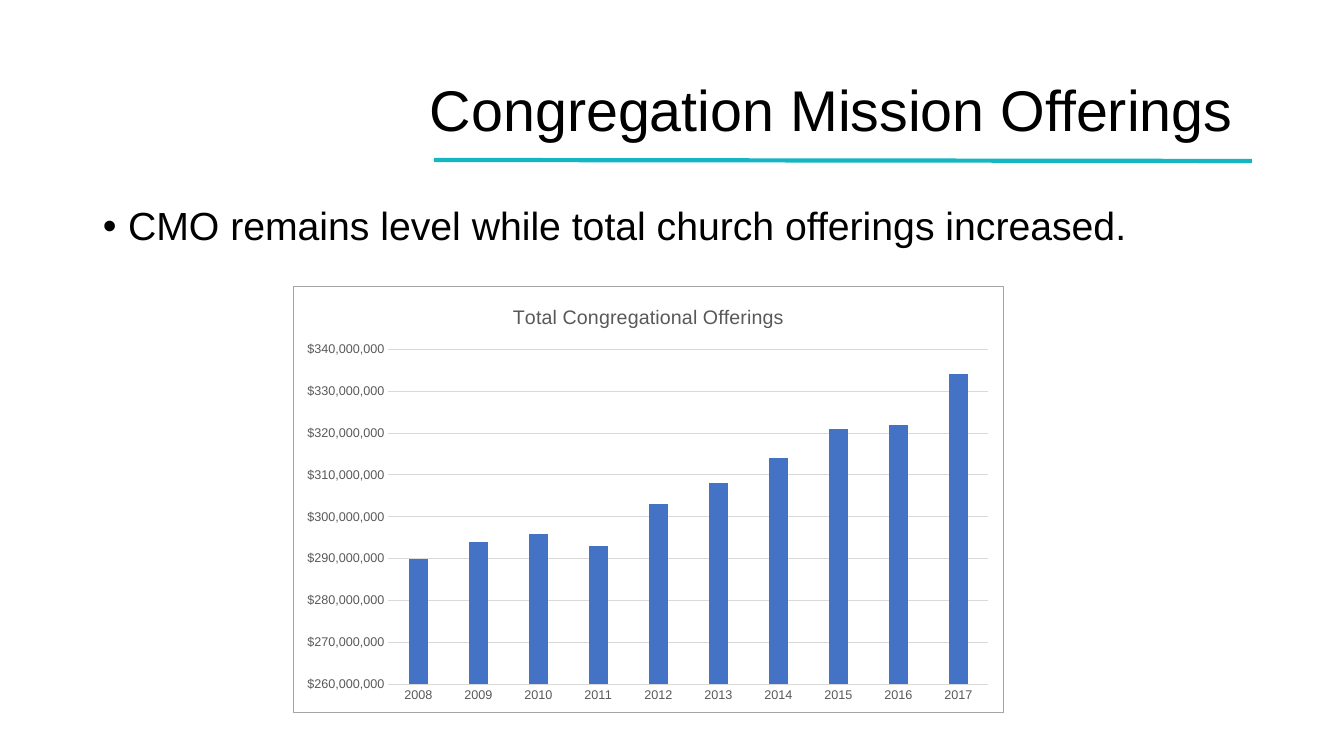
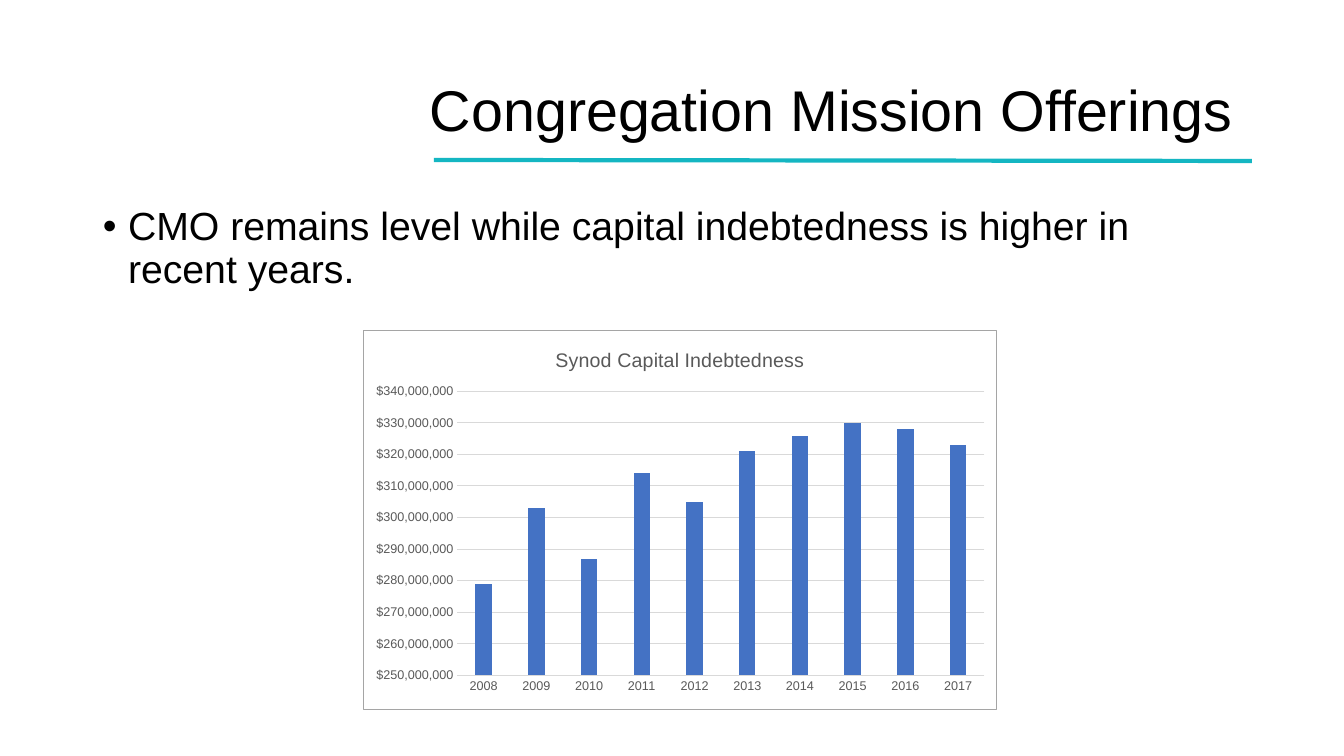
from lxml import etree
from pptx import Presentation
from pptx.chart.data import CategoryChartData
from pptx.dml.color import RGBColor
from pptx.enum.chart import XL_CHART_TYPE, XL_TICK_MARK
from pptx.enum.shapes import MSO_CONNECTOR
from pptx.enum.text import MSO_ANCHOR
from pptx.oxml import parse_xml
from pptx.oxml.ns import nsdecls, qn
from pptx.util import Pt

COLUMN = XL_CHART_TYPE.COLUMN_CLUSTERED
NO_TICK = XL_TICK_MARK.NONE
STRAIGHT = MSO_CONNECTOR.STRAIGHT
TOP, MIDDLE = MSO_ANCHOR.TOP, MSO_ANCHOR.MIDDLE

BLACK = RGBColor(0x00, 0x00, 0x00)
WHITE = RGBColor(0xFF, 0xFF, 0xFF)
TEAL = RGBColor(0x14, 0xB6, 0xC2)
BLUE = RGBColor(0x44, 0x72, 0xC4)
GREY_TEXT = RGBColor(0x59, 0x59, 0x59)
GREY_GRID = RGBColor(0xD9, 0xD9, 0xD9)
GREY_BORDER = RGBColor(0xA5, 0xA5, 0xA5)

FONT = "Arial"
SCALE = 914400 / 100.8
MILLION = 1_000_000
YEARS = [str(year) for year in range(2008, 2018)]
TITLE = "Congregation Mission Offerings"

SLIDES = [
    dict(bullet="CMO remains level while total church offerings increased.",
         title="Total Congregational Offerings",
         frame=(293, 286, 711, 427), plot=(388, 349, 601, 336), low=260,
         values=[290, 294, 296, 293, 303, 308, 314, 321, 322, 334]),
    dict(bullet="CMO remains level while capital indebtedness is higher in recent years.",
         title="Synod Capital Indebtedness",
         frame=(363, 330, 634, 380), plot=(457, 391, 528, 285), low=250,
         values=[279, 303, 287, 314, 305, 321, 326, 330, 328, 323]),
]


def px(*lengths):
    return [round(n * SCALE) for n in lengths]


def add_text(s, text, box, size, anchor=TOP, bullet=False):
    tf = s.shapes.add_textbox(*px(*box)).text_frame
    tf.word_wrap = True
    tf.vertical_anchor = anchor
    p = tf.paragraphs[0]
    p.line_spacing = 0.9
    if bullet:
        pPr = p._p.get_or_add_pPr()
        pPr.set("marL", "228600")
        pPr.set("indent", "-228600")
        etree.SubElement(pPr, qn("a:buFont"), typeface=FONT)
        etree.SubElement(pPr, qn("a:buChar"), char="•")
    r = p.add_run()
    r.text = text
    r.font.name = FONT
    r.font.size = Pt(size)
    r.font.color.rgb = BLACK


prs = Presentation()
prs.slide_width, prs.slide_height = px(1344, 756)

for item in SLIDES:
    s = prs.slides.add_slide(prs.slide_layouts[6])

    rule = s.shapes.add_connector(STRAIGHT, *px(434, 160, 1252, 161))
    rule.line.color.rgb = TEAL
    rule.line.width = Pt(3)
    etree.SubElement(rule._element.spPr, qn("a:effectLst"))

    add_text(s, TITLE, (420, 40, 831, 146), 41, anchor=MIDDLE)
    add_text(s, item["bullet"], (93, 202, 1159, 480), 28, bullet=True)

    data = CategoryChartData(number_format='"$"#,##0')
    data.categories = YEARS
    data.add_series("Series 1", [v * MILLION for v in item["values"]])
    chart = s.shapes.add_chart(COLUMN, *px(*item["frame"]), data).chart
    chart.has_legend = False
    chart.font.name = FONT
    chart.font.size = Pt(10)
    chart.font.color.rgb = BLACK

    chart.has_title = True
    chart.chart_title.include_in_layout = False
    r = chart.chart_title.text_frame.paragraphs[0].add_run()
    r.text = item["title"]
    r.font.name = FONT
    r.font.size = Pt(14)
    r.font.bold = False
    r.font.color.rgb = GREY_TEXT

    bars = chart.plots[0]
    bars.vary_by_categories = False
    bars.gap_width = 219
    bars.overlap = -27
    bars.series[0].format.fill.solid()
    bars.series[0].format.fill.fore_color.rgb = BLUE

    for axis in (chart.category_axis, chart.value_axis):
        axis.major_tick_mark = NO_TICK
        axis.minor_tick_mark = NO_TICK
        axis.tick_labels.font.name = FONT
        axis.tick_labels.font.size = Pt(9)
        axis.tick_labels.font.color.rgb = GREY_TEXT

    dollars = chart.value_axis
    dollars.minimum_scale = item["low"] * MILLION
    dollars.maximum_scale = 340 * MILLION
    dollars.major_unit = 10 * MILLION
    dollars.tick_labels.number_format = '"$"#,##0'
    dollars.tick_labels.number_format_is_linked = False
    dollars.format.line.fill.background()
    for line in (chart.category_axis.format.line, dollars.major_gridlines.format.line):
        line.color.rgb = GREY_GRID
        line.width = Pt(0.75)

    left, top, width, height = item["frame"]
    x, y, w, h = item["plot"]
    area = chart._chartSpace.chart.plotArea
    for old in area.findall(qn("c:layout")):
        area.remove(old)
    layout = etree.Element(qn("c:layout"))
    manual = etree.SubElement(layout, qn("c:manualLayout"))
    for tag, val in (("layoutTarget", "inner"), ("xMode", "edge"), ("yMode", "edge"),
                     ("x", (x - left) / width), ("y", (y - top) / height),
                     ("w", w / width), ("h", h / height)):
        etree.SubElement(manual, qn(f"c:{tag}"), val=str(val))
    area.insert(0, layout)

    chart._chartSpace.chart.addnext(parse_xml(
        f'<c:spPr {nsdecls("c", "a")}>'
        f'<a:solidFill><a:srgbClr val="{WHITE}"/></a:solidFill>'
        f'<a:ln w="{Pt(0.75)}"><a:solidFill><a:srgbClr val="{GREY_BORDER}"/></a:solidFill></a:ln>'
        '</c:spPr>'))

prs.save("out.pptx")
